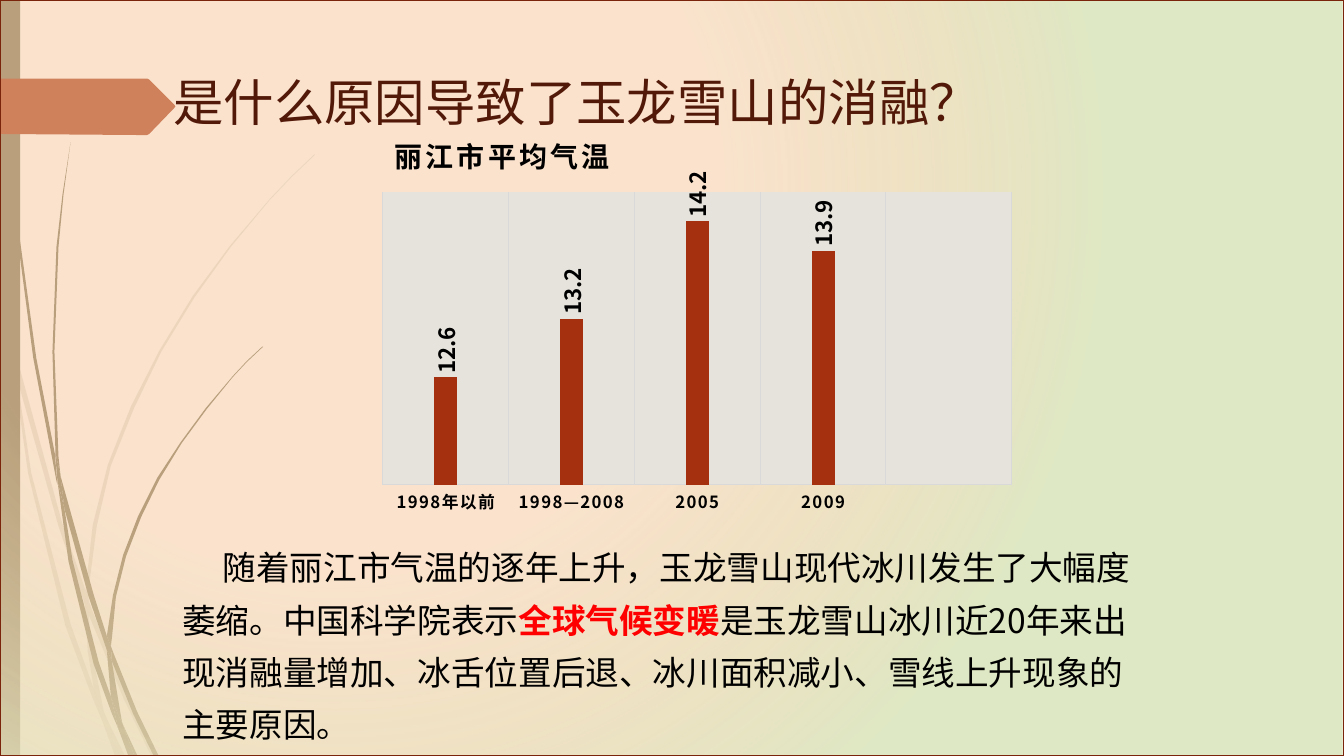
"""Build the slide on the cause of the melting of Jade Dragon Snow Mountain."""
import pptx
import pptx.chart.data
import pptx.dml.color
import pptx.enum.chart
import pptx.enum.shapes
import pptx.enum.text
import pptx.oxml
import pptx.oxml.ns
import pptx.util
from dataclasses import dataclass

Inches = pptx.util.Inches


@dataclass(frozen=True)
class Theme:
    font: str = "Noto Sans CJK SC"
    chart_font: str = "TeX Gyre Adventor"
    black: str = "000000"
    title: str = "521808"
    accent: str = "A53010"
    alert: str = "FF0000"
    reed: str = "766F54"
    peach: str = "F5CBA0"
    green: str = "DFE8C4"
    frame: str = "7A240C"
    plot: str = "E5E3DB"
    grid: str = "D9D9D9"
    title_size: int = 36
    body_size: int = 24
    chart_title_size: int = 20
    label_size: int = 16
    axis_size: int = 12
    chart_size: int = 10


THEME = Theme()
SLIDE_SIZE = (13.33, 7.5)
TITLE = "是什么原因导致了玉龙雪山的消融？"
TITLE_AREA = (1.62, 0.68, 8.43, 0.65)
BODY = [
    ("随着丽江市气温的逐年上升，玉龙雪山现代冰川发生了大幅度萎缩。中国科学院表示", False),
    ("全球气候变暖", True),
    ("是玉龙雪山冰川近20年来出现消融量增加、冰舌位置后退、冰川面积减小、雪线上升现象的主要原因。", False),
]
BODY_AREA = (1.71, 5.26, 9.72, 2.2)
CHART_TITLE = "丽江市平均气温"
CHART_AREA = (3.47, 1.13, 6.57, 4.09)
PERIODS = ["1998年以前", "1998—2008", "2005", "2009"]
TEMPERATURES = [12.6, 13.2, 14.2, 13.9, None]
BAND_AREA = (0, 0, 0.2, 7.5)
ARROW = [(1.74, 1.06), (1.48, 1.33), (1.46, 1.34), (1.36, 1.34), (0, 1.33),
         (0, 0.78), (1.46, 0.78), (1.48, 0.79), (1.73, 1.04)]
PALE_REEDS = [
    [(0.11, 3.5), (0.09, 3.22), (0, 2.82), (0, 2.99), (0.1, 3.44)],
    [(0.58, 5.22), (0.84, 5.99), (0.85, 5.86), (0.62, 5.2), (0.14, 3.45), (0.17, 3.76)],
    [(0.92, 6.07), (0.88, 5.96), (0.88, 6.1), (1.23, 6.94), (1.5, 7.5), (1.55, 7.5), (1.27, 6.92)],
    [(1.19, 7.5), (1.24, 7.5), (1.05, 7.11)],
    [(0.93, 6.83), (0.7, 6.19), (0.31, 4.69), (0.17, 3.76), (0.11, 3.5), (0.28, 4.7),
     (0.65, 6.21), (0.92, 6.93), (1.01, 7.14), (0.99, 7.07)],
    [(0.84, 5.99), (0.87, 6.46), (0.93, 6.83), (0.96, 6.92), (1.05, 7.11), (1.03, 7.06),
     (0.91, 6.46), (0.88, 6.1), (0.88, 6.08)],
    [(0.88, 5.84), (0.96, 5.22), (1.1, 4.62), (1.33, 4.05), (1.6, 3.49), (1.93, 2.95),
     (2.29, 2.45), (2.68, 1.98), (2.9, 1.75), (3.12, 1.54), (3.12, 1.53), (2.89, 1.75),
     (2.68, 1.97), (2.28, 2.44), (1.91, 2.94), (1.58, 3.48), (1.3, 4.03), (1.07, 4.61),
     (0.92, 5.21), (0.85, 5.84), (0.85, 5.86), (0.88, 5.96)],
    [(1.01, 7.14), (1.14, 7.5), (1.19, 7.5)],
    [(0.88, 6.08), (0.88, 5.96), (0.85, 5.86), (0.84, 5.99)],
    [(0.96, 6.92), (0.93, 6.83), (0.99, 7.07), (1.01, 7.14), (1.19, 7.5), (1.05, 7.11)],
]
DARK_REEDS = [
    [(0.07, 1.1), (0.17, 2.33), (0.33, 3.55), (0.56, 4.77), (0.57, 4.81), (0.55, 4.57),
     (0.55, 4.53), (0.36, 3.55), (0.19, 2.32), (0.08, 1.09), (0.05, 0.48), (0.04, 0),
     (0.03, 0), (0.04, 0.48)],
    [(0.88, 5.92), (1.06, 6.45), (1.06, 6.31), (0.93, 5.9), (0.6, 4.72), (0.64, 5.05)],
    [(1.13, 6.49), (1.1, 6.41), (1.11, 6.56), (1.32, 7.08), (1.52, 7.49), (1.57, 7.49), (1.36, 7.06)],
    [(1.1, 6.91), (0.98, 6.57), (0.72, 5.56), (0.64, 5.05), (0.57, 4.77), (0.68, 5.57),
     (0.93, 6.59), (1.11, 7.08), (1.17, 7.22), (1.16, 7.17)],
    [(0.6, 4.72), (0.58, 4.53), (0.54, 3.49), (0.58, 2.45), (0.63, 1.93), (0.7, 1.41),
     (0.62, 1.93), (0.56, 2.45), (0.52, 3.49), (0.55, 4.49)],
    [(1.33, 7.49), (1.36, 7.49), (1.22, 7.19)],
    [(0.57, 4.77), (0.64, 5.05), (0.6, 4.72), (0.55, 4.49), (0.55, 4.53)],
    [(1.11, 6.33), (1.15, 5.92), (1.25, 5.52), (1.4, 5.13), (1.58, 4.76), (1.8, 4.4),
     (2.05, 4.06), (2.31, 3.74), (2.45, 3.59), (2.61, 3.44), (2.6, 3.44), (2.45, 3.58),
     (2.31, 3.73), (2.04, 4.05), (1.79, 4.39), (1.56, 4.74), (1.37, 5.12), (1.22, 5.51),
     (1.12, 5.91), (1.06, 6.31), (1.1, 6.41)],
    [(1.17, 7.22), (1.27, 7.49), (1.31, 7.49)],
    [(1.06, 6.45), (1.1, 6.91), (1.16, 7.06), (1.22, 7.19), (1.21, 7.16), (1.11, 6.56), (1.09, 6.51)],
    [(1.06, 6.45), (1.09, 6.51), (1.11, 6.56), (1.1, 6.41), (1.06, 6.31)],
    [(1.16, 7.06), (1.1, 6.91), (1.16, 7.17), (1.17, 7.22), (1.3, 7.49), (1.33, 7.49), (1.22, 7.19)],
]


def rgb(color):
    return pptx.dml.color.RGBColor.from_string(color)


def xml(text):
    tag_end = min(text.index(mark) for mark in " />" if mark in text)
    return pptx.oxml.parse_xml(f'{text[:tag_end]} {pptx.oxml.ns.nsdecls("a", "c")}{text[tag_end:]}')


def place(area):
    return [Inches(value) for value in area]


def paint(shape, color, opacity=100):
    shape.shadow.inherit = False
    shape.fill.solid()
    shape.fill.fore_color.rgb = rgb(color)
    shape.line.fill.background()
    if opacity < 100:
        target = shape.element.xpath("./p:spPr/a:solidFill/a:srgbClr")[0]
        target.append(xml(f'<a:alpha val="{opacity * 1000}"/>'))


def add_outline(page, points, color, opacity=100):
    vertices = [tuple(place(point)) for point in points]
    builder = page.shapes.build_freeform(*vertices[0])
    builder.add_line_segments(vertices[1:], close=True)
    paint(builder.convert_to_shape(), color, opacity)


def set_font(font, size, color, bold=False, name=THEME.font):
    font.size, font.bold, font.name = pptx.util.Pt(size), bold, name
    font.color.rgb = rgb(color)


def add_east_asian_font(element):
    for properties in element.xpath(".//a:defRPr[a:latin]"):
        properties.append(xml(f'<a:ea typeface="{THEME.font}"/>'))


def add_backdrop(page):
    for reeds, opacity in ((PALE_REEDS, 20), (DARK_REEDS, 100)):
        for points in reeds:
            add_outline(page, points, THEME.reed, opacity)
    rectangle = pptx.enum.shapes.MSO_SHAPE.RECTANGLE
    paint(page.shapes.add_shape(rectangle, *place(BAND_AREA)), THEME.reed)
    add_outline(page, ARROW, THEME.accent)
    veil = page.shapes.add_shape(rectangle, 0, 0, *place(SLIDE_SIZE))
    paint(veil, THEME.peach)
    veil.line.color.rgb = rgb(THEME.frame)
    veil.line.width = pptx.util.Pt(1.25)
    solid = veil.element.xpath("./p:spPr/a:solidFill")[0]
    solid.getparent().replace(solid, xml(
        f'<a:gradFill><a:gsLst><a:gs pos="50000"><a:srgbClr val="{THEME.peach}"><a:alpha val="52000"/>'
        f'</a:srgbClr></a:gs><a:gs pos="100000"><a:srgbClr val="{THEME.green}"/></a:gs></a:gsLst>'
        '<a:path path="circle"><a:fillToRect l="50000" t="50000" r="100000" b="100000"/></a:path></a:gradFill>'))


def add_text(page, area, runs, size, color):
    box = page.shapes.add_textbox(*place(area))
    box.text_frame.word_wrap = True
    para = box.text_frame.paragraphs[0]
    set_font(para.font, size, color)
    add_east_asian_font(box.element)
    for text, stressed in runs:
        span = para.add_run()
        span.text = text
        if stressed:
            span.font.bold = True
            span.font.color.rgb = rgb(THEME.alert)
    return box


def set_layout(parent, index, values, inner=""):
    for old in parent.xpath("./c:layout"):
        parent.remove(old)
    modes = '<c:xMode val="edge"/><c:yMode val="edge"/>'
    sizes = "".join(f'<c:{key} val="{value}"/>' for key, value in zip("xywh", values))
    parent.insert(index, xml(f"<c:layout><c:manualLayout>{inner}{modes}{sizes}</c:manualLayout></c:layout>"))


def add_temperature_chart(page):
    data = pptx.chart.data.CategoryChartData()
    data.categories = PERIODS
    data.add_series("Series 1", TEMPERATURES)
    kinds = pptx.enum.chart
    chart = page.shapes.add_chart(kinds.XL_CHART_TYPE.COLUMN_CLUSTERED, *place(CHART_AREA), data).chart
    set_font(chart.font, THEME.chart_size, THEME.black, name=THEME.chart_font)
    chart.has_legend = False
    heading = chart.chart_title.text_frame
    heading.text = CHART_TITLE
    set_font(heading.paragraphs[0].font, THEME.chart_title_size, THEME.black, True)
    plot = chart.plots[0]
    plot.vary_by_categories = False
    plot.gap_width, plot.overlap = 444, -90
    bars = plot.series[0].format.fill
    bars.solid()
    bars.fore_color.rgb = rgb(THEME.accent)
    labels = plot.series[0].data_labels
    labels.show_value = True
    labels.position = kinds.XL_LABEL_POSITION.OUTSIDE_END
    set_font(labels.font, THEME.label_size, THEME.black, True)
    periods, degrees = chart.category_axis, chart.value_axis
    periods.has_major_gridlines = True
    periods.major_tick_mark = kinds.XL_TICK_MARK.NONE
    set_font(periods.tick_labels.font, THEME.axis_size, THEME.black, True)
    for line in (periods.format.line, periods.major_gridlines.format.line):
        line.color.rgb = rgb(THEME.grid)
        line.width = pptx.util.Pt(0.75)
    degrees.minimum_scale, degrees.maximum_scale = 11.5, 14.5
    degrees.has_major_gridlines = degrees.visible = False
    root = chart.element
    add_east_asian_font(root)
    for part, spacing in (("c:title", "200"), ("c:catAx/c:txPr", "100")):
        root.xpath(f".//{part}//a:defRPr")[0].set("spc", spacing)
    turned = root.xpath(".//c:dLbls/c:txPr/a:bodyPr")[0]
    turned.set("rot", "-5400000")
    turned.set("vert", "horz")
    set_layout(root.xpath(".//c:chart/c:title")[0], 1, (0.06, 0.03))
    area = root.xpath(".//c:plotArea")[0]
    set_layout(area, 0, (0.05, 0.19, 0.95, 0.71), '<c:layoutTarget val="inner"/>')
    area.append(xml(f'<c:spPr><a:solidFill><a:srgbClr val="{THEME.plot}"/></a:solidFill></c:spPr>'))


deck = pptx.Presentation()
deck.slide_width, deck.slide_height = place(SLIDE_SIZE)
page = deck.slides.add_slide(deck.slide_layouts[6])
add_backdrop(page)
title = add_text(page, TITLE_AREA, [(TITLE, False)], THEME.title_size, THEME.title)
title.text_frame.vertical_anchor = pptx.enum.text.MSO_ANCHOR.MIDDLE
add_temperature_chart(page)
body = add_text(page, BODY_AREA, BODY, THEME.body_size, THEME.black)
body.text_frame.paragraphs[0].line_spacing = 1.3
body.element.xpath(".//a:pPr")[0].set("indent", str(Inches(0.4)))
deck.save("out.pptx")
